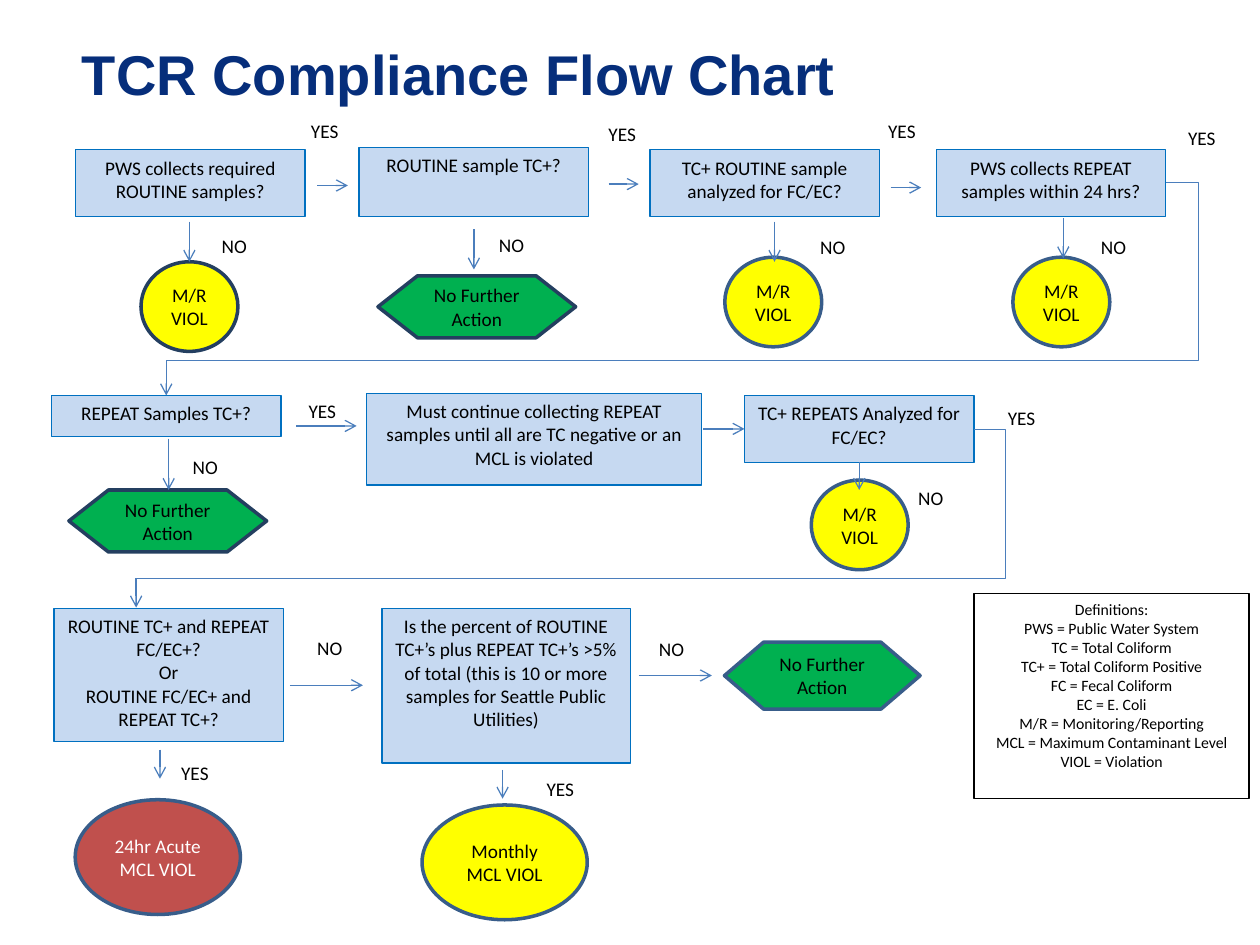
from dataclasses import dataclass
from typing import NamedTuple, Optional

from lxml.etree import SubElement
from pptx import Presentation
from pptx.dml.color import RGBColor
from pptx.enum.shapes import MSO_CONNECTOR, MSO_SHAPE
from pptx.enum.text import MSO_ANCHOR, PP_ALIGN
from pptx.oxml.ns import qn
from pptx.util import Pt

HUES = {
    "title": "062E7B", "black": "000000", "white": "FFFFFF",
    "pale": "C6D9F1", "blue": "0070C0", "yellow": "FFFF00",
    "green": "00B050", "red": "C0504D", "navy": "243F60",
    "steel": "385D8A", "arrow": "4B7EBC",
}


class Style(NamedTuple):
    form: MSO_SHAPE
    fill: str
    edge: str
    weight: float
    anchor: MSO_ANCHOR
    ink: str = "black"
    size: int = 11


TOP, MID = MSO_ANCHOR.TOP, MSO_ANCHOR.MIDDLE
RECT, OVAL, HEX = MSO_SHAPE.RECTANGLE, MSO_SHAPE.OVAL, MSO_SHAPE.FLOWCHART_PREPARATION
STEP = Style(RECT, "pale", "blue", 0.75, TOP)
VIOL = Style(OVAL, "yellow", "steel", 2, MID)
FIRST = VIOL._replace(edge="navy")
ACUTE = VIOL._replace(fill="red", ink="white")
DONE = Style(HEX, "green", "navy", 2, MID)
LAST = DONE._replace(edge="steel")
KEY = Style(RECT, "white", "black", 0.75, TOP, size=9)


@dataclass
class Node:
    name: str
    style: Style
    x: float
    y: float
    w: float
    h: float
    text: str


@dataclass
class Arrow:
    x1: float
    y1: float
    x2: float
    y2: float
    start: Optional[tuple] = None
    stop: Optional[tuple] = None


@dataclass
class Bend:
    """An elbow that leaves to the right, turns down at x = turn, and runs back left."""
    x1: float
    y1: float
    x2: float
    y2: float
    turn: float


class Label(NamedTuple):
    text: str
    x: float
    y: float


WIDE = 131.2
BALL = (55.4, 51.2)
DISC = (94.4, 65.6)
STOP = (113, 35.4)
END = "No Further Action"
MISS = "M/R VIOL"

NODES = [
    Node("collect", STEP, 43.2, 85.6, WIDE, 38.2, "PWS collects required ROUTINE samples?"),
    Node("routine", STEP, 205.2, 84.2, WIDE, 39.6, "ROUTINE sample TC+?"),
    Node("analyze", STEP, 371.4, 85.6, WIDE, 38.2, "TC+ ROUTINE sample analyzed for FC/EC?"),
    Node("within", STEP, 535, 85.6, WIDE, 38.2, "PWS collects REPEAT samples within 24 hrs?"),
    Node("miss1", FIRST, 80.6, 149.6, *BALL, MISS),
    Node("stop1", DONE, 216, 157.6, *STOP, END),
    Node("miss2", VIOL, 414.2, 147, *BALL, MISS),
    Node("miss3", VIOL, 578.8, 147, *BALL, MISS),
    Node("repeat", STEP, 29.4, 226, WIDE, 23.4, "REPEAT Samples TC+?"),
    Node("continue", STEP, 209.6, 224.8, 191.4, 52.4,
         "Must continue collecting REPEAT samples until all are TC negative or an MCL is violated"),
    Node("fecal", STEP, 425.4, 226, WIDE, 38.2, "TC+ REPEATS Analyzed for FC/EC?"),
    Node("stop2", DONE, 39.4, 280, *STOP, END),
    Node("miss4", VIOL, 463.6, 274.4, *BALL, MISS),
    Node("both", STEP, 30.8, 347.6, WIDE, 76.2,
         "ROUTINE TC+ and REPEAT FC/EC+?\nOr\nROUTINE FC/EC+ and REPEAT TC+?"),
    Node("percent", STEP, 218.2, 347.6, 142, 88.4,
         "Is the percent of ROUTINE TC+’s plus REPEAT TC+’s >5% of total "
         "(this is 10 or more samples for Seattle Public Utilities)"),
    Node("stop3", LAST, 414, 367, 111.8, 38.2, END),
    Node("acute", ACUTE, 43, 457, *DISC, "24hr Acute MCL VIOL"),
    Node("monthly", VIOL, 241.2, 460, *DISC, "Monthly MCL VIOL"),
    Node("key", KEY, 556.6, 339.2, 157.2, 117.2,
         "Definitions:\nPWS = Public Water System\nTC = Total Coliform\n"
         "TC+ = Total Coliform Positive\nFC = Fecal Coliform\nEC = E. Coli\n"
         "M/R = Monitoring/Reporting\nMCL = Maximum Contaminant Level\nVIOL = Violation"),
]

ARROWS = [
    Arrow(181.4, 106, 198.8, 106),
    Arrow(347.8, 105.2, 365, 105.2),
    Arrow(509, 107.2, 526.4, 107.2),
    Arrow(108.2, 126.6, 108.2, 149.6),
    Arrow(270.8, 131, 270.8, 154),
    Arrow(442.6, 126.6, 442.6, 149.6),
    Arrow(607.6, 124.6, 607.6, 147.6),
    Arrow(95, 206, 95, 226, stop=("repeat", 0)),
    Arrow(96.4, 250.6, 96.4, 280),
    Arrow(169.2, 243.4, 203.8, 243.4),
    Arrow(401.8, 245.1, 425.4, 245.1, stop=("fecal", 1)),
    Arrow(491, 264.2, 491, 280, start=("fecal", 2)),
    Arrow(77.8, 330.4, 77.8, 347.2),
    Arrow(165.6, 391.6, 207.4, 391.6),
    Arrow(365, 386, 406.8, 386),
    Arrow(91.4, 428.4, 91.4, 445),
    Arrow(287.2, 440, 287.2, 456.4),
]

BENDS = [
    Bend(666.6, 104.4, 95, 206, 684.8),
    Bend(556.6, 245.4, 77.8, 330.4, 574.8),
]

SPANS = {"YES": 34.6, "NO": 29.6}
LABELS = [
    Label("YES", 170.6, 64.8), Label("YES", 340.6, 66.4),
    Label("YES", 500.4, 64.8), Label("YES", 671.8, 68.4),
    Label("NO", 119.6, 130.4), Label("NO", 278, 129.6),
    Label("NO", 461.6, 131), Label("NO", 622, 131),
    Label("YES", 169.2, 224.6), Label("YES", 568.8, 228.4),
    Label("NO", 103, 256.4), Label("NO", 517.6, 274.4),
    Label("NO", 174.2, 360), Label("NO", 369.4, 360.8),
    Label("YES", 96.4, 431.4), Label("YES", 305.2, 440.8),
]


def tint(name: str) -> RGBColor:
    return RGBColor.from_string(HUES[name])


def write(frame, text: str, size: float, ink: str, align, face: str = "Calibri") -> None:
    frame.text = text
    for par in frame.paragraphs:
        par.alignment = align
        par.font.size = Pt(size)
        par.font.name = face
        par.font.color.rgb = tint(ink)


def draw_node(shapes, node: Node):
    style = node.style
    shape = shapes.add_shape(style.form, Pt(node.x), Pt(node.y), Pt(node.w), Pt(node.h))
    shape.shadow.inherit = False
    shape.fill.solid()
    shape.fill.fore_color.rgb = tint(style.fill)
    shape.line.color.rgb = tint(style.edge)
    shape.line.width = Pt(style.weight)
    frame = shape.text_frame
    frame.word_wrap = True
    frame.vertical_anchor = style.anchor
    write(frame, node.text, style.size, style.ink, PP_ALIGN.CENTER)
    return shape


def add_line(shapes, kind, item):
    line = shapes.add_connector(kind, Pt(item.x1), Pt(item.y1), Pt(item.x2), Pt(item.y2))
    line.line.color.rgb = tint("arrow")
    line.line.width = Pt(0.75)
    SubElement(line._element.spPr, qn("a:effectLst"))
    return line


def draw_arrow(shapes, arrow: Arrow, made: dict) -> None:
    line = add_line(shapes, MSO_CONNECTOR.STRAIGHT, arrow)
    SubElement(line.line._get_or_add_ln(), qn("a:tailEnd"), type="arrow")
    if arrow.start:
        name, site = arrow.start
        line.begin_connect(made[name], site)
    if arrow.stop:
        name, site = arrow.stop
        line.end_connect(made[name], site)


def draw_bend(shapes, bend: Bend) -> None:
    line = add_line(shapes, MSO_CONNECTOR.ELBOW, bend)
    ratio = round((bend.x1 - bend.turn) / (bend.x1 - bend.x2) * 100000)
    guides = line._element.spPr.find(qn("a:prstGeom")).get_or_add_avLst()
    SubElement(guides, qn("a:gd"), name="adj1", fmla=f"val {ratio}")


def draw_label(shapes, label: Label) -> None:
    box = shapes.add_textbox(Pt(label.x), Pt(label.y), Pt(SPANS[label.text]), Pt(18.8))
    box.text_frame.word_wrap = False
    write(box.text_frame, label.text, 11, "black", PP_ALIGN.LEFT)


def main() -> None:
    deck = Presentation()
    deck.slide_width, deck.slide_height = Pt(720), Pt(540)
    slide = deck.slides.add_slide(deck.slide_layouts.get_by_name("Title Only"))
    shapes = slide.shapes

    title = shapes.title
    title.left, title.top, title.width, title.height = Pt(39.6), Pt(-5), Pt(612.8), Pt(94)
    title.text_frame.vertical_anchor = MID
    write(title.text_frame, "TCR Compliance Flow Chart", 32, "title", PP_ALIGN.LEFT, "Arial")
    title.text_frame.paragraphs[0].font.bold = True

    made = {node.name: draw_node(shapes, node) for node in NODES}
    for bend in BENDS:
        draw_bend(shapes, bend)
    for arrow in ARROWS:
        draw_arrow(shapes, arrow, made)
    for label in LABELS:
        draw_label(shapes, label)
    deck.save("out.pptx")


if __name__ == "__main__":
    main()
